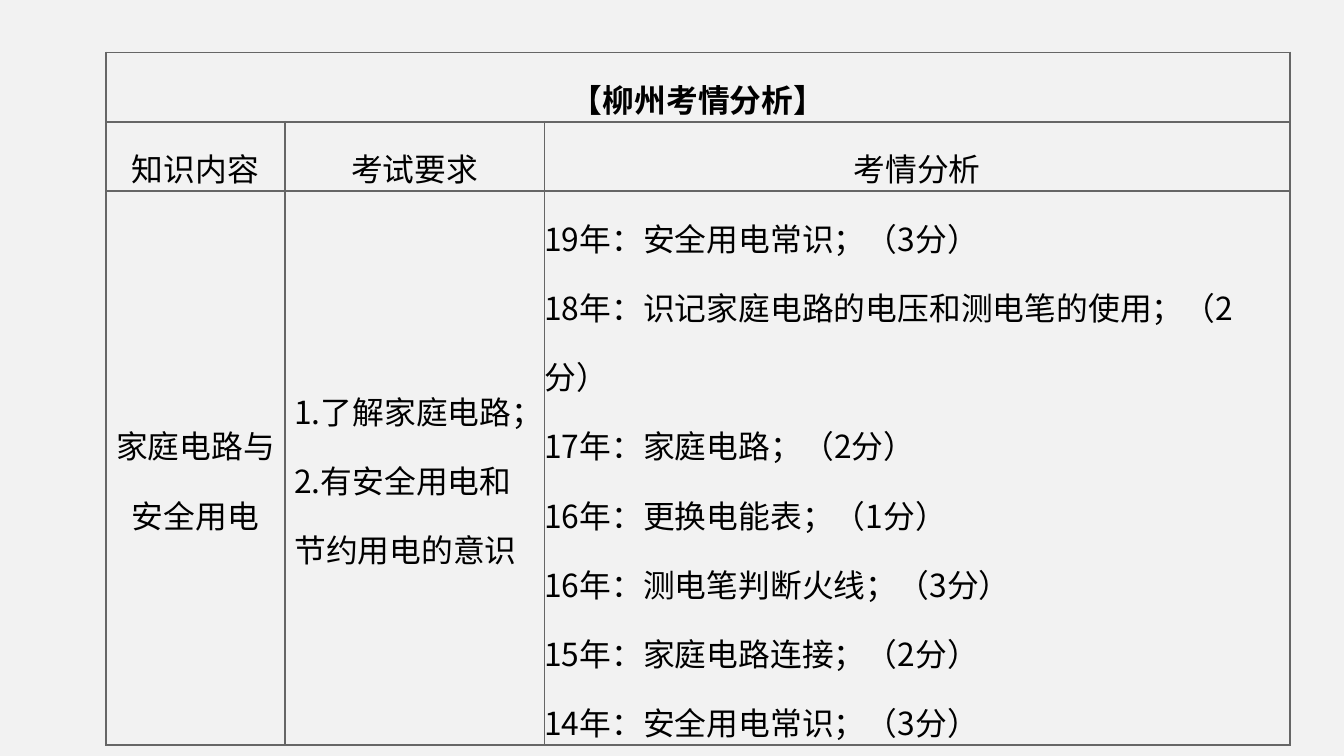
from dataclasses import dataclass

import pptx
import pptx.dml.color
import pptx.enum.text
import pptx.oxml
import pptx.oxml.ns
import pptx.util


@dataclass(frozen=True)
class Theme:
    paper: str = "F2F2F2"
    ink: str = "000000"
    rule: str = "666666"
    font: str = "Noto Sans CJK SC"
    text_size: float = 17
    rule_width: float = 1
    line_spacing: float = 1.5


THEME = Theme()
SLIDE_WIDTH = 10
SLIDE_HEIGHT = SLIDE_WIDTH * 9 / 16
TABLE_ORIGIN = (0.79, 0.39)
COLUMN_WIDTHS = (1.33, 1.93, 5.55)
ROW_HEIGHTS = (0.5, 0.5, 2.83)
CENTER = pptx.enum.text.PP_ALIGN.CENTER
LEFT = pptx.enum.text.PP_ALIGN.LEFT

TITLE = "【柳州考情分析】"
HEADINGS = ("知识内容", "考试要求", "考情分析")
TOPIC = ("家庭电路与", "安全用电")
REQUIREMENTS = ("1.了解家庭电路；", "2.有安全用电和节约用电的意识")
EXAM_QUESTIONS = (
    (19, "安全用电常识", 3),
    (18, "识记家庭电路的电压和测电笔的使用", 2),
    (17, "家庭电路", 2),
    (16, "更换电能表", 1),
    (16, "测电笔判断火线", 3),
    (15, "家庭电路连接", 2),
    (14, "安全用电常识", 3),
)


def rgb(value):
    return pptx.dml.color.RGBColor.from_string(value)


def paint_background(slide):
    slide.background.fill.solid()
    slide.background.fill.fore_color.rgb = rgb(THEME.paper)


def draw_borders(cell):
    properties = cell._tc.get_or_add_tcPr()
    width = pptx.util.Pt(THEME.rule_width)
    for position, side in enumerate(("lnL", "lnR", "lnT", "lnB")):
        border = pptx.oxml.parse_xml(
            f'<a:{side} {pptx.oxml.ns.nsdecls("a")} w="{width}">'
            f'<a:solidFill><a:srgbClr val="{THEME.rule}"/></a:solidFill></a:{side}>'
        )
        properties.insert(position, border)


def style_paragraph(paragraph, align, bold):
    paragraph.alignment = align
    paragraph.line_spacing = THEME.line_spacing
    font = paragraph.font
    font.size = pptx.util.Pt(THEME.text_size)
    font.bold = bold
    font.color.rgb = rgb(THEME.ink)
    font.name = THEME.font
    east_asian = pptx.oxml.parse_xml(
        f'<a:ea {pptx.oxml.ns.nsdecls("a")} typeface="{THEME.font}"/>'
    )
    paragraph._p.get_or_add_pPr().get_or_add_defRPr().append(east_asian)


def style_cell(cell):
    cell.fill.solid()
    cell.fill.fore_color.rgb = rgb(THEME.paper)
    cell.vertical_anchor = pptx.enum.text.MSO_ANCHOR.MIDDLE
    cell.margin_left = cell.margin_right = 0
    cell.margin_top = cell.margin_bottom = 0
    draw_borders(cell)


def write_cell(cell, lines, align=CENTER, bold=False, side_margin=0):
    cell.margin_left = cell.margin_right = pptx.util.Inches(side_margin)
    cell.text = "\n".join(lines)
    for paragraph in cell.text_frame.paragraphs:
        style_paragraph(paragraph, align, bold)


def add_grid(slide):
    bounds = (*TABLE_ORIGIN, sum(COLUMN_WIDTHS), sum(ROW_HEIGHTS))
    grid = slide.shapes.add_table(
        len(ROW_HEIGHTS), len(COLUMN_WIDTHS), *map(pptx.util.Inches, bounds)
    ).table
    grid.first_row = grid.horz_banding = False
    for column, width in zip(grid.columns, COLUMN_WIDTHS):
        column.width = pptx.util.Inches(width)
    for row, height in zip(grid.rows, ROW_HEIGHTS):
        row.height = pptx.util.Inches(height)
    for cell in grid.iter_cells():
        style_cell(cell)
    return grid


def fill_analysis(grid):
    grid.cell(0, 0).merge(grid.cell(0, len(COLUMN_WIDTHS) - 1))
    write_cell(grid.cell(0, 0), [TITLE], bold=True)
    for column, heading in enumerate(HEADINGS):
        write_cell(grid.cell(1, column), [heading])
    write_cell(grid.cell(2, 0), TOPIC)
    write_cell(grid.cell(2, 1), REQUIREMENTS, LEFT, side_margin=0.07)
    questions = [
        f"{year}年：{subject}；（{points}分）" for year, subject, points in EXAM_QUESTIONS
    ]
    write_cell(grid.cell(2, 2), questions, LEFT)


def main():
    deck = pptx.Presentation()
    deck.slide_width = pptx.util.Inches(SLIDE_WIDTH)
    deck.slide_height = pptx.util.Inches(SLIDE_HEIGHT)
    slide = deck.slides.add_slide(deck.slide_layouts[6])
    paint_background(slide)
    fill_analysis(add_grid(slide))
    deck.save("out.pptx")


if __name__ == "__main__":
    main()
